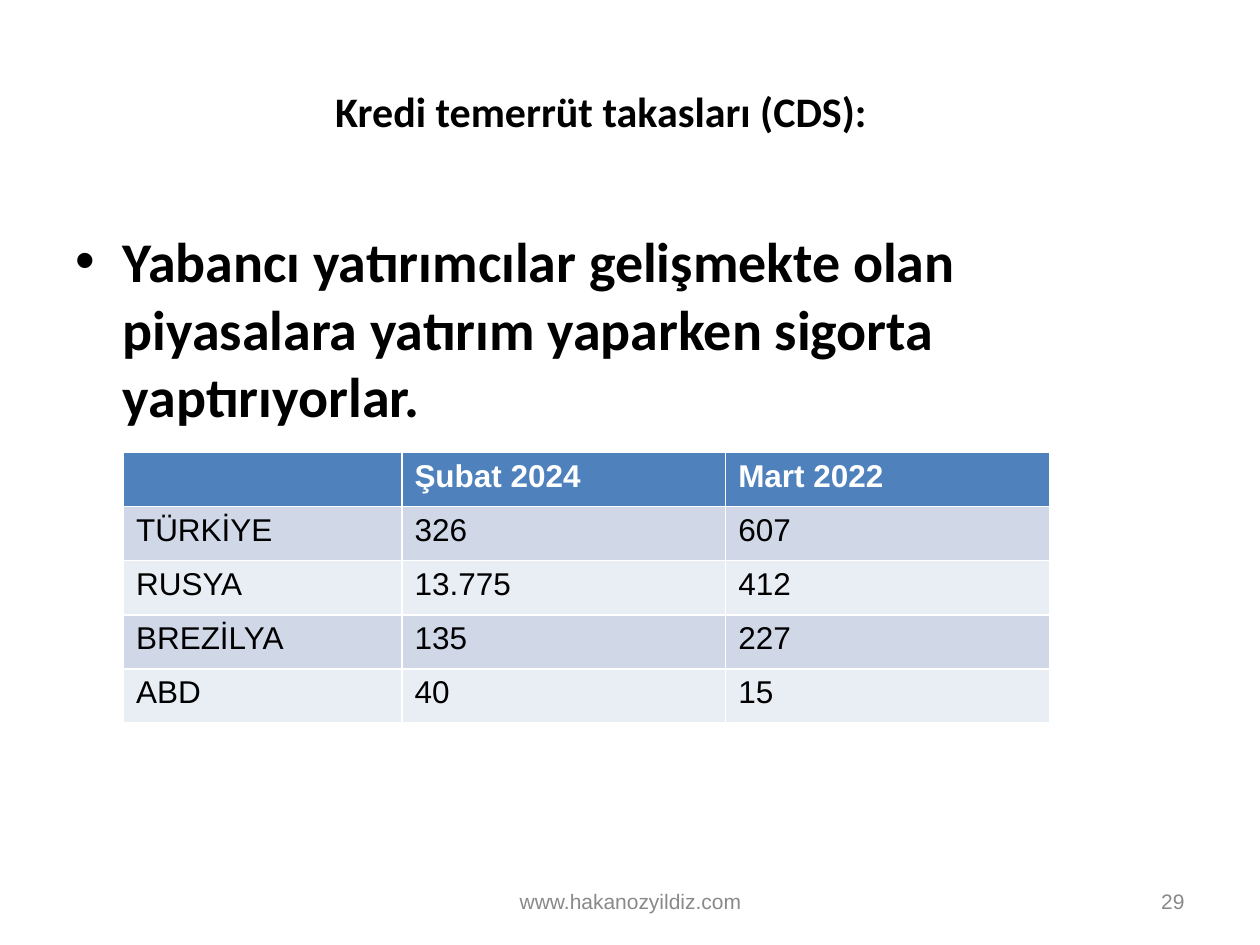
"""Build the slide on credit default swaps with its country comparison table."""
import dataclasses
import typing

import pptx
import pptx.dml.color
import pptx.enum.text
import pptx.util

Inches = pptx.util.Inches
Align = pptx.enum.text.PP_ALIGN
Anchor = pptx.enum.text.MSO_ANCHOR


@dataclasses.dataclass(frozen=True)
class Theme:
    heading_font: str = "Calibri"
    plain_font: str = "Arial"
    ink: str = "000000"
    header_ink: str = "FFFFFF"
    muted: str = "898989"
    header_fill: str = "4F81BD"
    band_fills: tuple[str, str] = ("D0D8E8", "E9EDF4")
    title_size: int = 24
    body_size: int = 32
    table_size: int = 18
    footer_size: int = 12


class Box(typing.NamedTuple):
    left: float
    top: float
    width: float
    height: float


class FooterItem(typing.NamedTuple):
    text: str
    box: Box
    align: Align


class CdsRow(typing.NamedTuple):
    country: str
    february_2024: str
    march_2022: str


THEME = Theme()
TITLE_BOX = Box(0.27, 0.25, 9, 1.25)
BODY_BOX = Box(0.5, 1.75, 9, 4.95)
TABLE_BOX = Box(0.98, 3.59, 7.35, 2.15)
COLUMN_WIDTHS = (2.21, 2.57, 2.57)
CDS_ROWS = (
    CdsRow("", "Şubat 2024", "Mart 2022"),
    CdsRow("TÜRKİYE", "326", "607"),
    CdsRow("RUSYA", "13.775", "412"),
    CdsRow("BREZİLYA", "135", "227"),
    CdsRow("ABD", "40", "15"),
)
FOOTER = (
    FooterItem("www.hakanozyildiz.com", Box(3.42, 6.95, 3.17, 0.4), Align.CENTER),
    FooterItem("29", Box(7.17, 6.95, 2.33, 0.4), Align.RIGHT),
)


def write(frame, text: str, font: str, size: int, color: str, bold: bool = False) -> None:
    frame.text = text
    for run in frame.paragraphs[0].runs:
        run.font.name = font
        run.font.size = pptx.util.Pt(size)
        run.font.bold = bold
        run.font.color.rgb = pptx.dml.color.RGBColor.from_string(color)


def fill_placeholder(placeholder, box: Box, text: str, size: int) -> None:
    placeholder.left, placeholder.top, placeholder.width, placeholder.height = map(Inches, box)
    placeholder.text_frame.auto_size = pptx.enum.text.MSO_AUTO_SIZE.NONE
    write(placeholder.text_frame, text, THEME.heading_font, size, THEME.ink, bold=True)


def add_cds_table(slide, rows: typing.Sequence[CdsRow]) -> None:
    table = slide.shapes.add_table(len(rows), len(COLUMN_WIDTHS), *map(Inches, TABLE_BOX)).table
    for column, width in zip(table.columns, COLUMN_WIDTHS):
        column.width = Inches(width)
    for row_index, row in enumerate(rows):
        header = row_index == 0
        fill = THEME.header_fill if header else THEME.band_fills[(row_index - 1) % 2]
        ink = THEME.header_ink if header else THEME.ink
        for column_index, value in enumerate(row):
            cell = table.cell(row_index, column_index)
            cell.fill.solid()
            cell.fill.fore_color.rgb = pptx.dml.color.RGBColor.from_string(fill)
            write(cell.text_frame, value, THEME.plain_font, THEME.table_size, ink, header)


def add_footer_item(slide, item: FooterItem) -> None:
    frame = slide.shapes.add_textbox(*map(Inches, item.box)).text_frame
    frame.word_wrap = True
    frame.vertical_anchor = Anchor.MIDDLE
    write(frame, item.text, THEME.plain_font, THEME.footer_size, THEME.muted)
    frame.paragraphs[0].alignment = item.align


def main() -> None:
    presentation = pptx.Presentation()
    presentation.slide_width = Inches(10)
    presentation.slide_height = Inches(7.5)
    slide = presentation.slides.add_slide(presentation.slide_layouts[1])
    title, body = slide.placeholders
    fill_placeholder(title, TITLE_BOX, "Kredi temerrüt takasları (CDS):", THEME.title_size)
    fill_placeholder(
        body,
        BODY_BOX,
        "Yabancı yatırımcılar gelişmekte olan piyasalara yatırım yaparken sigorta yaptırıyorlar.",
        THEME.body_size,
    )
    for item in FOOTER:
        add_footer_item(slide, item)
    add_cds_table(slide, CDS_ROWS)
    presentation.save("out.pptx")


if __name__ == "__main__":
    main()
